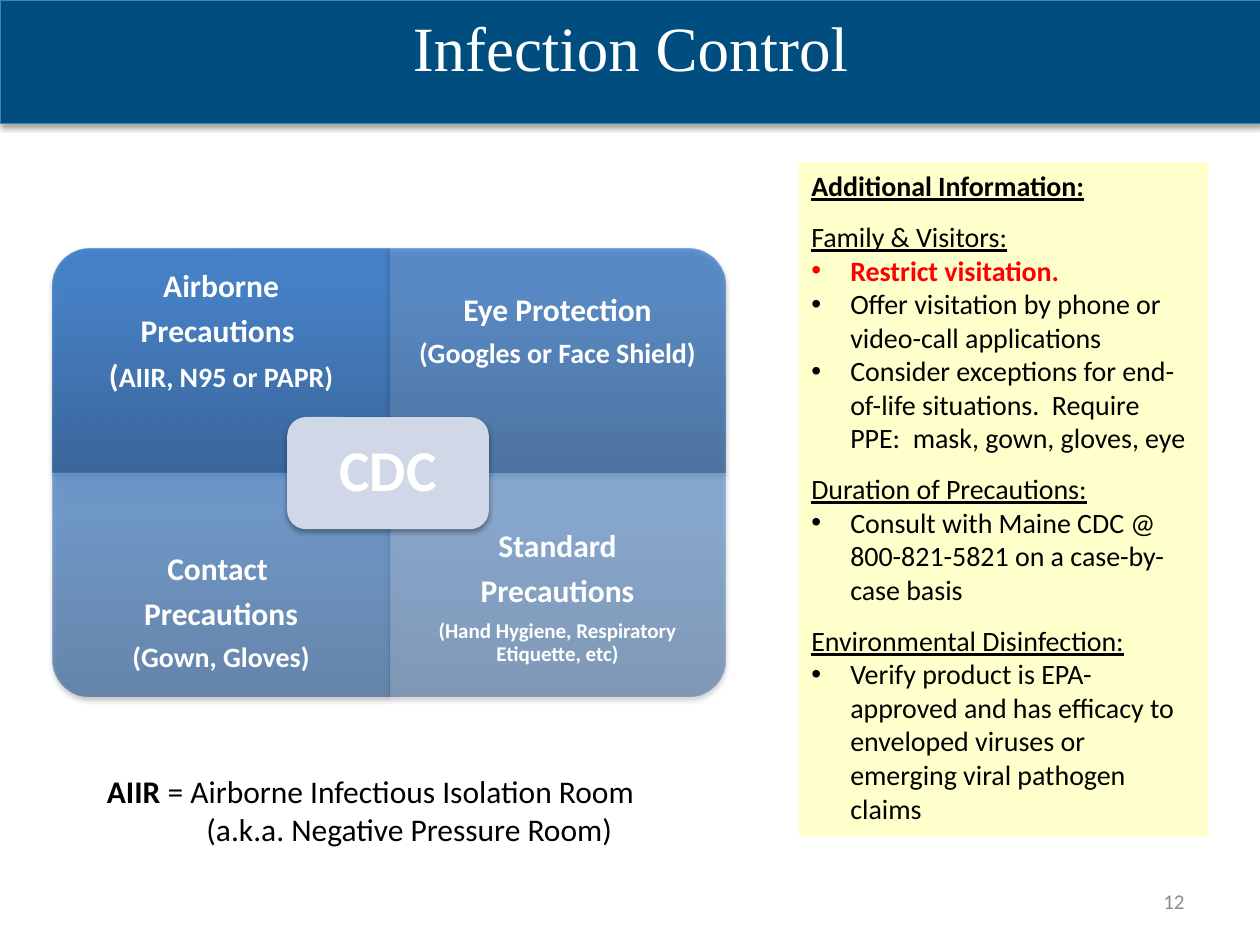
from lxml.etree import SubElement
from pptx import Presentation
from pptx.dml.color import RGBColor
from pptx.enum.shapes import MSO_SHAPE
from pptx.enum.text import MSO_ANCHOR, PP_ALIGN
from pptx.oxml.ns import qn
from pptx.util import Inches, Pt

GRID_LEFT, GRID_TOP = 0.42, 1.97
CELL_WIDTH, CELL_HEIGHT = 2.67, 1.78
LABEL_HEIGHT = 1.33
GRADIENT = [(0, "2F5F99"), (80, "3D7CC7"), (100, "3A7CCB")]

PRECAUTIONS = [
    (0, 0, 270, 90, 0, [("Airborne", 18), ("Precautions ", 18), ("(", 18)]),
    (1, 0, 0, 77, 0, [("Eye Protection", 18), ("(Googles or Face Shield)", 16)]),
    (0, 1, 180, 63, 0, [("Contact ", 18), ("Precautions", 18), ("(Gown, Gloves)", 16)]),
    (1, 1, 90, 50, 0.24, [("Standard", 18), ("Precautions", 18),
                          ("(Hand Hygiene, Respiratory Etiquette, etc)", 12)]),
]

GUIDANCE = [
    ("Family & Visitors:", [
        "Restrict visitation.",
        "Offer visitation by phone or video-call applications",
        "Consider exceptions for end-of-life situations.  Require PPE:  mask, gown, gloves, eye",
    ]),
    ("Duration of Precautions:", [
        "Consult with Maine CDC @ 800-821-5821 on a case-by-case basis",
    ]),
    ("Environmental Disinfection:", [
        "Verify product is EPA-approved and has efficacy to enveloped viruses "
        "or emerging viral pathogen claims",
    ]),
]


def color(value):
    """Turn a hex string into a colour."""
    return RGBColor.from_string(value)


def write(frame, text, size=16, font="Calibri", fill="000000", bold=False, underline=False,
          align=PP_ALIGN.LEFT, before=0, after=0, spacing=None, indent=0, bullet=False,
          joined=False):
    """Write a formatted paragraph, or a run joined to the last paragraph."""
    paragraph = frame.paragraphs[-1]
    if not joined:
        if paragraph.runs:
            paragraph = frame.add_paragraph()
        paragraph.alignment = align
        paragraph.space_before, paragraph.space_after = Pt(before), Pt(after)
        if spacing:
            paragraph.line_spacing = spacing
        properties = paragraph._p.get_or_add_pPr()
        properties.set("marL", str(Inches(indent)))
        properties.set("indent", str(-Inches(indent) if bullet else 0))
        if bullet:
            SubElement(properties, qn("a:buFont"), typeface="Arial")
            SubElement(properties, qn("a:buChar"), char="•")
    run = paragraph.add_run()
    run.text = text
    run.font.name, run.font.size = font, Pt(size)
    run.font.bold, run.font.underline = bold, underline
    run.font.color.rgb = color(fill)


def set_frame(shape, anchor=MSO_ANCHOR.TOP, side=0.1, above=0.05, below=0.05):
    """Set wrapping, anchor and insets, and return the text frame."""
    frame = shape.text_frame
    frame.word_wrap = True
    frame.vertical_anchor = anchor
    frame.margin_left = frame.margin_right = Inches(side)
    frame.margin_top, frame.margin_bottom = Inches(above), Inches(below)
    return frame


def add_text_box(slide, left, top, width, height, **layout):
    """Add a text box and return its frame."""
    box = slide.shapes.add_textbox(Inches(left), Inches(top), Inches(width), Inches(height))
    return set_frame(box, **layout)


def add_panel(slide, kind, left, top, width, height, fill=None):
    """Add a shape without line or shadow."""
    panel = slide.shapes.add_shape(kind, Inches(left), Inches(top), Inches(width), Inches(height))
    panel.shadow.inherit = False
    panel.line.fill.background()
    if fill:
        panel.fill.solid()
        panel.fill.fore_color.rgb = color(fill)
    return panel


def add_shadow(shape):
    """Give a shape a soft shadow below it."""
    shape.shadow.inherit = False
    effects = shape._element.spPr.find(qn("a:effectLst"))
    shadow = SubElement(effects, qn("a:outerShdw"), blurRad=str(Pt(3.1)), dist=str(Pt(1.8)),
                        dir="5400000", rotWithShape="0")
    tint = SubElement(shadow, qn("a:srgbClr"), val="000000")
    SubElement(tint, qn("a:alpha"), val="35000")


def set_gradient(shape, opacity):
    """Fill a shape with the translucent blue gradient, dark at the bottom."""
    shape.fill.gradient()
    shape.fill.gradient_angle = 90
    gradient = shape._element.spPr.find(qn("a:gradFill"))
    gradient.set("rotWithShape", "0")
    stops = gradient.find(qn("a:gsLst"))
    for stop in list(stops):
        stops.remove(stop)
    for position, shade in GRADIENT:
        stop = SubElement(stops, qn("a:gs"), pos=str(position * 1000))
        tint = SubElement(stop, qn("a:srgbClr"), val=shade)
        SubElement(tint, qn("a:alpha"), val=str(opacity * 1000))


def write_label(frame, text, size):
    """Write one centred white line of the precautions matrix."""
    write(frame, text, size=size, fill="FFFFFF", bold=True, align=PP_ALIGN.CENTER,
          spacing=0.9, after=round(size * 0.35, 1))


def add_title(slide):
    """Format the title placeholder as the banner."""
    banner = slide.shapes.title
    banner.left, banner.top = Inches(0), Inches(0)
    banner.width, banner.height = Inches(10.01), Inches(0.98)
    banner.fill.solid()
    banner.fill.fore_color.rgb = color("004D80")
    banner.line.color.rgb = color("4B7EBC")
    banner.line.width = Pt(0.75)
    add_shadow(banner)
    frame = set_frame(banner, anchor=MSO_ANCHOR.MIDDLE, below=0.3)
    write(frame, "Infection Control", size=36, font="Times New Roman", fill="FFFFFF",
          align=PP_ALIGN.CENTER)


def add_precaution(slide, column, row, rotation, opacity, extra, lines):
    """Add one quadrant of the matrix with its label."""
    left, top = GRID_LEFT + column * CELL_WIDTH, GRID_TOP + row * CELL_HEIGHT
    width, height = CELL_WIDTH, CELL_HEIGHT
    if rotation % 180:
        width, height = height, width
    quadrant = add_panel(slide, MSO_SHAPE.ROUND_1_RECTANGLE, left + (CELL_WIDTH - width) / 2,
                         top + (CELL_HEIGHT - height) / 2, width, height)
    quadrant.rotation = rotation
    set_gradient(quadrant, opacity)
    add_shadow(quadrant)
    label_top = top + row * (CELL_HEIGHT - LABEL_HEIGHT)
    frame = add_text_box(slide, left, label_top, CELL_WIDTH, LABEL_HEIGHT,
                         anchor=MSO_ANCHOR.MIDDLE, side=0.14, above=0.14, below=0.14 + extra)
    for text, size in lines:
        write_label(frame, text, size)
    if lines[-1][0] == "(":
        write(frame, "AIIR, N95 or PAPR)", fill="FFFFFF", bold=True, joined=True)


def add_guidance(slide):
    """Add the yellow panel of additional information."""
    panel = add_panel(slide, MSO_SHAPE.RECTANGLE, 6.34, 1.29, 3.25, 5.35, "FFFFCC")
    frame = set_frame(panel)
    write(frame, "Additional Information:", bold=True, underline=True)
    for heading, points in GUIDANCE:
        write(frame, heading, underline=True, before=9.8)
        for point in points:
            urgent = point.startswith("Restrict")
            write(frame, point, fill="FF0000" if urgent else "000000", bold=urgent,
                  indent=0.31, bullet=True)


def main():
    """Build the slide and save it."""
    deck = Presentation()
    deck.slide_width, deck.slide_height = Inches(10), Inches(7.5)
    slide = deck.slides.add_slide(deck.slide_layouts[5])
    add_title(slide)
    page = add_text_box(slide, 7.17, 6.95, 2.33, 0.4, anchor=MSO_ANCHOR.MIDDLE)
    write(page, "12", size=12, fill="8C8C8C", align=PP_ALIGN.RIGHT)
    for precaution in PRECAUTIONS:
        add_precaution(slide, *precaution)
    hub = add_panel(slide, MSO_SHAPE.ROUNDED_RECTANGLE, 2.28, 3.31, 1.6, 0.89, "D0D8E8")
    add_shadow(hub)
    write_label(set_frame(hub, anchor=MSO_ANCHOR.MIDDLE, side=0.14, above=0.14, below=0.14),
                "CDC", 33)
    add_guidance(slide)
    glossary = add_text_box(slide, 0.75, 6.08, 4.5, 0.71)
    write(glossary, "AIIR", size=18, bold=True)
    write(glossary, " = Airborne Infectious Isolation Room", size=18, joined=True)
    write(glossary, "(a.k.a. Negative Pressure Room)", size=18, indent=0.79)
    deck.save("out.pptx")


if __name__ == "__main__":
    main()
